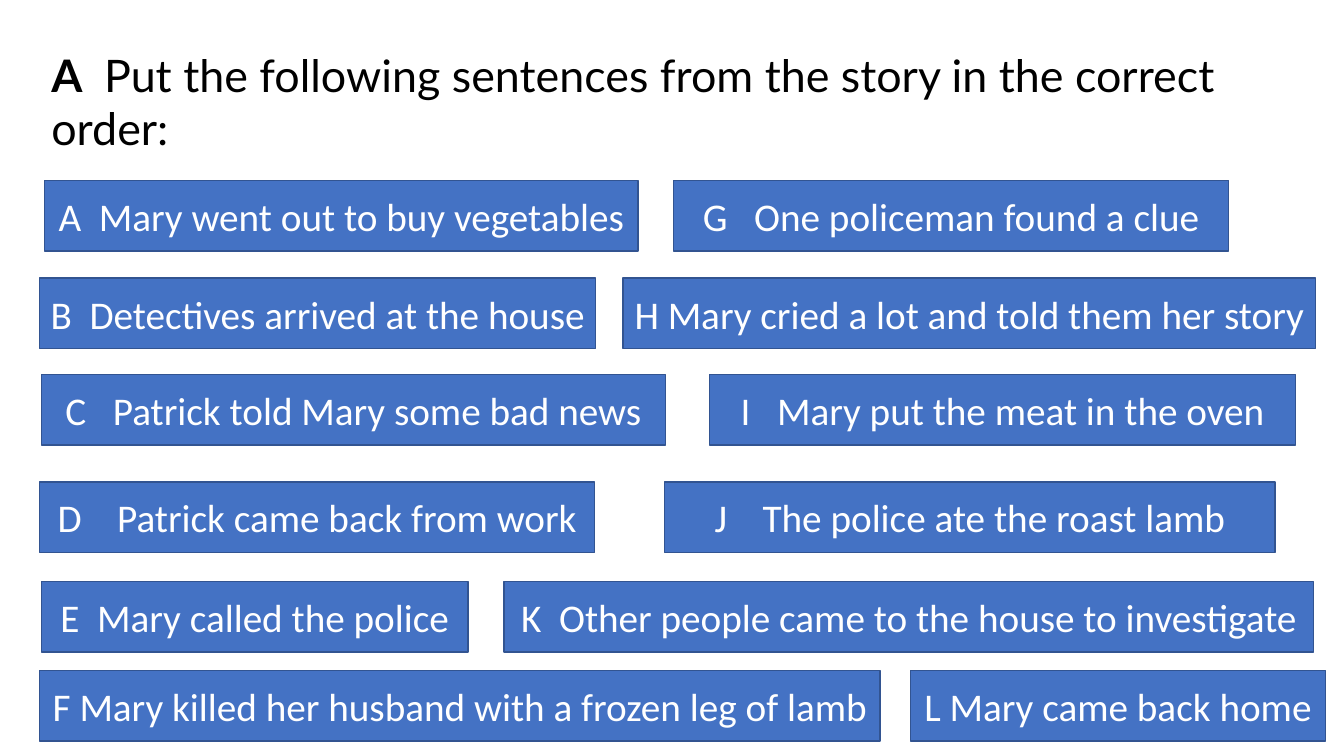
from pptx import Presentation
from pptx import util as u
from pptx.dml.color import RGBColor
from pptx.enum import shapes, text

BLACK = RGBColor(0x00, 0x00, 0x00)
WHITE = RGBColor(0xFF, 0xFF, 0xFF)
BLUE = RGBColor(0x44, 0x72, 0xC4)
BLUE_EDGE = RGBColor(0x32, 0x54, 0x91)

SLIDE_WIDTH = u.Inches(13.33)
SLIDE_HEIGHT = u.Inches(7.5)
CARD_HEIGHT = 9.33
SPACE_SHARE = 0.226

ROW_TOPS = [23.87, 36.8, 49.53, 63.73, 76.93, 88.67]
LEFT_CARDS = [
    ("A", 2, "Mary went out to buy vegetables", 3.3, 44.18),
    ("B", 2, "Detectives arrived at the house", 2.93, 41.4),
    ("C", 3, "Patrick told Mary some bad news", 3.08, 46.43),
    ("D", 4, "Patrick came back from work", 2.93, 41.33),
    ("E", 2, "Mary called the police", 3.08, 31.73),
    ("F", 1, "Mary killed her husband with a frozen leg of lamb", 2.93, 62.55),
]
RIGHT_CARDS = [
    ("G", 3, "One policeman found a clue", 50.1, 41.33),
    ("H", 1, "Mary cried a lot and told them her story", 46.35, 51.53),
    ("I", 3, "Mary put the meat in the oven", 52.8, 43.58),
    ("J", 4, "The police ate the roast lamb", 49.43, 45.45),
    ("K", 2, "Other people came to the house to investigate", 37.5, 60.23),
    ("L", 1, "Mary came back home", 67.73, 30.9),
]


def place(left, top, width, height):
    return (
        int(SLIDE_WIDTH * left / 100),
        int(SLIDE_HEIGHT * top / 100),
        int(SLIDE_WIDTH * width / 100),
        int(SLIDE_HEIGHT * height / 100),
    )


def add_run(paragraph, wording, font_name, size, color, bold=False):
    run = paragraph.add_run()
    run.text = wording
    run.font.name = font_name
    run.font.size = u.Pt(size)
    run.font.color.rgb = color
    run.font.bold = bold
    return run


def add_lettered_line(paragraph, letter, gap, sentence, font_name, size, color, bold=False):
    add_run(paragraph, letter, font_name, size, color, bold)
    space = add_run(paragraph, " ", font_name, size, color)
    if gap > 1:
        extra = round((gap - 1) * SPACE_SHARE * size * 100)
        space._r.get_or_add_rPr().set("spc", str(extra))
    add_run(paragraph, sentence, font_name, size, color)


def add_instruction(slide):
    instruction = slide.shapes.add_textbox(*place(3.08, 5.6, 93.92, 15.73))
    frame = instruction.text_frame
    frame.word_wrap = True
    frame.auto_size = text.MSO_AUTO_SIZE.SHAPE_TO_FIT_TEXT
    add_lettered_line(
        frame.paragraphs[0], "A", 2,
        "Put the following sentences from the story in the correct order:",
        "Lato", 32, BLACK, bold=True,
    )


def add_card(slide, top, letter, gap, sentence, left, width):
    card = slide.shapes.add_shape(
        shapes.MSO_SHAPE.RECTANGLE, *place(left, top, width, CARD_HEIGHT)
    )
    card.shadow.inherit = False
    card.fill.solid()
    card.fill.fore_color.rgb = BLUE
    card.line.color.rgb = BLUE_EDGE
    card.line.width = u.Pt(1)
    frame = card.text_frame
    frame.word_wrap = True
    frame.vertical_anchor = text.MSO_ANCHOR.MIDDLE
    paragraph = frame.paragraphs[0]
    paragraph.alignment = text.PP_ALIGN.CENTER
    add_lettered_line(paragraph, letter, gap, sentence, "Calibri", 28, WHITE)


def main():
    deck = Presentation()
    deck.slide_width = SLIDE_WIDTH
    deck.slide_height = SLIDE_HEIGHT
    slide = deck.slides.add_slide(deck.slide_layouts[6])
    add_instruction(slide)
    for cards in (LEFT_CARDS, RIGHT_CARDS):
        for top, card in zip(ROW_TOPS, cards):
            add_card(slide, top, *card)
    deck.save("out.pptx")


if __name__ == "__main__":
    main()
